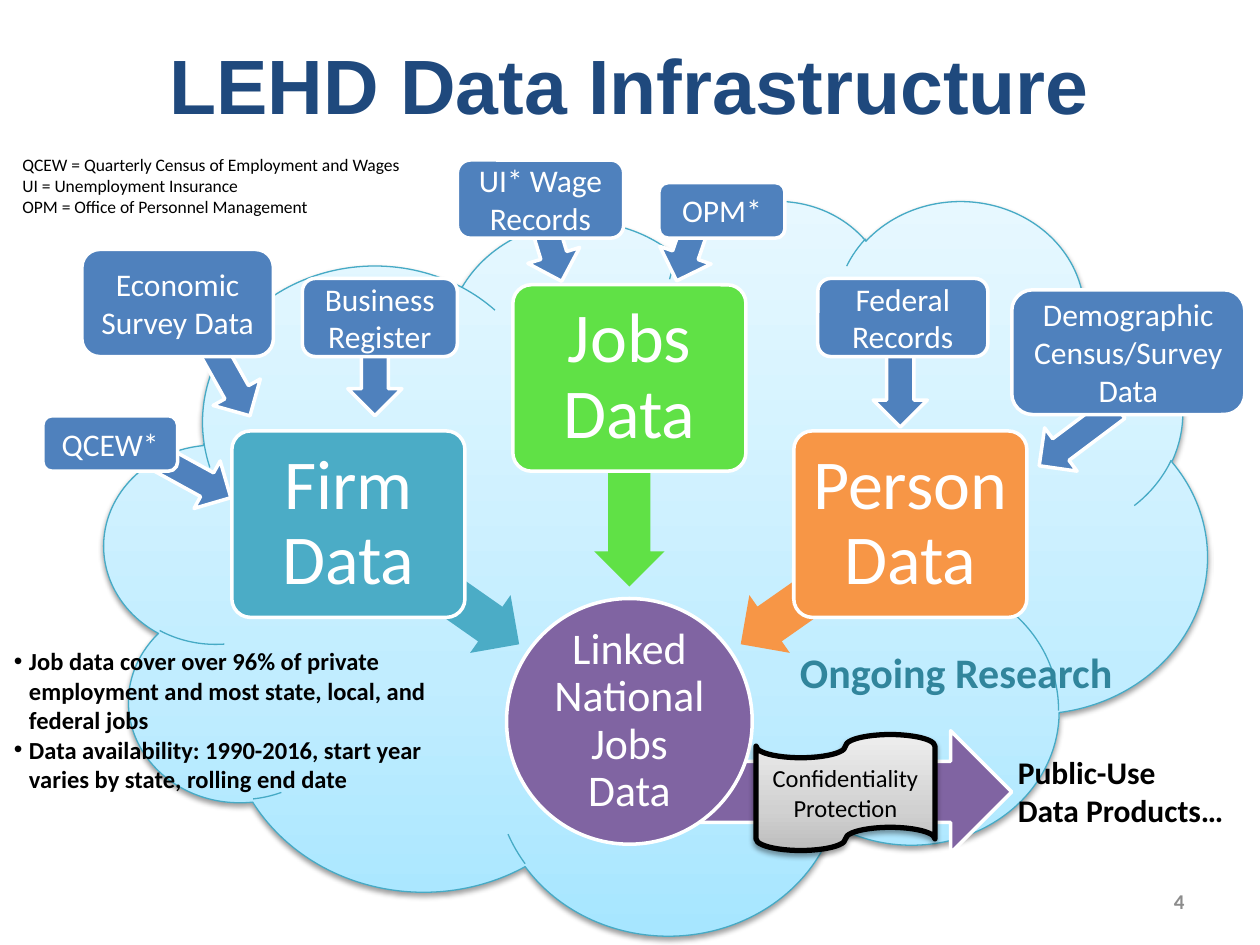
from copy import deepcopy
from dataclasses import dataclass

from lxml.etree import SubElement
from pptx import Presentation
from pptx.dml.color import RGBColor
from pptx.enum.shapes import MSO_SHAPE as Preset
from pptx.enum.text import MSO_ANCHOR as Anchor, MSO_AUTO_SIZE as AutoSize, PP_ALIGN as Align
from pptx.oxml.ns import qn
from pptx.util import Emu, Pt

PX = 9144


@dataclass(frozen=True)
class Theme:
    title_font: str = "Arial"
    body_font: str = "Calibri"
    navy: str = "1F497D"
    blue: str = "4F81BD"
    teal: str = "4BACC6"
    green: str = "60E146"
    orange: str = "F79646"
    purple: str = "8064A2"
    dark_teal: str = "31859C"
    cloud_line: str = "46AAC5"
    gray: str = "8C8C8C"
    white: str = "FFFFFF"
    black: str = "000000"
    cloud_stops: tuple = ((0, "A7E6FF"), (0.35, "C1EDFF"), (1, "E7F8FF"))
    tape_stops: tuple = ((0, "BDBDBD"), (0.35, "D1D1D1"), (1, "EEEEEE"))
    title_size: int = 44
    card_size: int = 40
    hub_size: int = 25
    heading_size: int = 24
    label_size: int = 18
    note_size: int = 14
    number_size: int = 12
    legend_size: int = 10


THEME = Theme()

ARROW_SIZE = (77, 43)
INPUTS = [
    ("QCEW*", (34, 330, 107, 44), (111, 355), 28.8),
    ("Economic Survey Data", (65, 198, 152, 85), (141, 275), 60.7),
    ("Business Register", (240, 221, 123, 62), (259, 270), 90),
    ("UI* Wage Records", (363, 127, 132, 62), (396, 165), 73),
    ("Federal Records", (649, 221, 135, 62), (676, 279), 90),
    ("Demographic Census/Survey Data", (803, 230, 185, 99), (817, 325), 143.1),
    ("OPM*", (523, 145, 100, 44), (511, 165), 109),
]

CARD_SIZE = (185, 148)
CARD_ARROW_SIZE = (165, 56)
CARDS = [
    ("Firm Data", THEME.teal, (184, 342), (262, 436), 215),
    ("Jobs Data", THEME.green, (407, 226), (417, 355), 270),
    ("Person Data", THEME.orange, (630, 342), (573, 436), 325),
]


def emu(box):
    return [Emu(value * PX) for value in box]


def set_attributes(target, values):
    for name, value in values.items():
        setattr(target, name, value)


def write_text(shape, text, size, color, bold=False, font=THEME.body_font,
               paragraph_format=None, **frame_format):
    frame = shape.text_frame
    set_attributes(frame, {"word_wrap": True, "auto_size": AutoSize.NONE, **frame_format})
    frame.text = text
    for paragraph in frame.paragraphs:
        set_attributes(paragraph, paragraph_format or {})
        for run in paragraph.runs:
            set_attributes(run.font, {"size": Pt(size), "bold": bold, "name": font})
            run.font.color.rgb = RGBColor.from_string(color)


def add_preset(slide, preset, box, fill=None, line=THEME.white, width=2,
               rotation=0, adjustments=()):
    shape = slide.shapes.add_shape(preset, *emu(box))
    shape.shadow.inherit = False
    shape.rotation = rotation
    for index, value in enumerate(adjustments):
        shape.adjustments[index] = value
    if fill:
        shape.fill.solid()
        shape.fill.fore_color.rgb = RGBColor.from_string(fill)
    if line:
        shape.line.color.rgb = RGBColor.from_string(line)
        shape.line.width = Pt(width)
    else:
        shape.line.fill.background()
    return shape


def add_shaded_preset(slide, preset, box, stops, line, width):
    shape = add_preset(slide, preset, box, line=line, width=width)
    shape.fill.gradient()
    shape.fill.gradient_angle = 90
    stop_list = shape.element.spPr.find(".//" + qn("a:gsLst"))
    while len(stop_list) < len(stops):
        stop_list.append(deepcopy(stop_list[0]))
    for stop, (position, color) in zip(shape.fill.gradient_stops, stops):
        stop.position = position
        stop.color.rgb = RGBColor.from_string(color)
    effects = shape.element.spPr.find(qn("a:effectLst"))
    shadow = SubElement(effects, qn("a:outerShdw"), blurRad=str(Pt(3.1)), dist=str(Pt(1.6)),
                        dir="5400000", rotWithShape="0")
    shadow_color = SubElement(shadow, qn("a:srgbClr"), val=THEME.black)
    SubElement(shadow_color, qn("a:alpha"), val="38000")
    return shape


def add_label(slide, box, text, size, color, **options):
    label = slide.shapes.add_textbox(*emu(box))
    write_text(label, text, size, color, **options)


def write_centered(shape, text, size, color, line_spacing=1.0, inset=None, **options):
    sides = ("margin_left", "margin_top", "margin_right", "margin_bottom")
    margins = {side: Emu(inset * PX) for side in sides} if inset else {}
    write_text(shape, text, size, color, vertical_anchor=Anchor.MIDDLE,
               paragraph_format={"alignment": Align.CENTER, "line_spacing": line_spacing},
               **margins, **options)


def place_placeholder(placeholder, box):
    set_attributes(placeholder, dict(zip(("left", "top", "width", "height"), emu(box))))
    placeholder.element.getparent().append(placeholder.element)


def add_inputs(slide):
    for _, _, position, rotation in INPUTS:
        add_preset(slide, Preset.RIGHT_ARROW, position + ARROW_SIZE, THEME.blue,
                   rotation=rotation)
    for text, box, _, _ in INPUTS:
        source = add_preset(slide, Preset.ROUNDED_RECTANGLE, box, THEME.blue)
        write_centered(source, text, THEME.label_size, THEME.white)


def add_cards(slide):
    for text, color, position, arrow_position, rotation in CARDS:
        add_preset(slide, Preset.LEFT_ARROW, arrow_position + CARD_ARROW_SIZE, color,
                   line=None, rotation=rotation, adjustments=(0.6, 0.5))
        card = add_preset(slide, Preset.ROUNDED_RECTANGLE, position + CARD_SIZE, color,
                          adjustments=(0.1,))
        write_centered(card, text, THEME.card_size, THEME.white, line_spacing=0.9, inset=8)


def add_hub(slide):
    hub = add_preset(slide, Preset.OVAL, (402, 475, 195, 195), THEME.purple)
    write_centered(hub, "Linked National Jobs Data", THEME.hub_size, THEME.white,
                   line_spacing=0.9, inset=2)


def add_protection(slide):
    tape = add_shaded_preset(slide, Preset.FLOWCHART_PUNCHED_TAPE, (600, 583, 142, 92),
                             THEME.tape_stops, THEME.black, 3)
    write_centered(tape, "Confidentiality Protection", THEME.note_size, THEME.black)


def add_title(slide):
    place_placeholder(slide.shapes.title, (50, 4, 900, 125))
    write_centered(slide.shapes.title, "LEHD Data Infrastructure", THEME.title_size,
                   THEME.navy, bold=True, font=THEME.title_font)


def add_coverage_list(slide):
    body = slide.placeholders[1]
    place_placeholder(body, (1, 508, 375, 128))
    write_text(body, "Job data cover over 96% of private employment and most state, local, "
               "and federal jobs\nData availability: 1990-2016, start year varies by state, "
               "rolling end date", THEME.note_size, THEME.black, bold=True,
               paragraph_format={"space_before": Pt(0)})
    for paragraph in body.text_frame.paragraphs:
        properties = paragraph._p.get_or_add_pPr()
        properties.set("marL", str(12 * PX))
        properties.set("indent", str(-12 * PX))


def add_labels(slide):
    add_label(slide, (798, 593, 190, 71), "Public-Use\vData Products…",
              THEME.label_size, THEME.black, bold=True)
    add_label(slide, (8, 117, 324, 61),
              "QCEW = Quarterly Census of Employment and Wages\n"
              "UI = Unemployment Insurance\nOPM = Office of Personnel Management",
              THEME.legend_size, THEME.black, word_wrap=False)
    add_label(slide, (625, 508, 271, 50), "Ongoing Research", THEME.heading_size,
              THEME.dark_teal, bold=True, word_wrap=False)
    add_label(slide, (717, 695, 233, 40), "4", THEME.number_size, THEME.gray, bold=True,
              vertical_anchor=Anchor.MIDDLE, paragraph_format={"alignment": Align.RIGHT})


def main():
    presentation = Presentation()
    presentation.slide_width, presentation.slide_height = emu((1000, 750))
    slide = presentation.slides.add_slide(presentation.slide_layouts[1])
    add_shaded_preset(slide, Preset.CLOUD, (83, 158, 875, 583), THEME.cloud_stops,
                      THEME.cloud_line, 0.75)
    add_preset(slide, Preset.RIGHT_ARROW, (493, 580, 310, 97), THEME.purple)
    add_title(slide)
    add_inputs(slide)
    add_hub(slide)
    add_cards(slide)
    add_coverage_list(slide)
    add_protection(slide)
    add_labels(slide)
    presentation.save("out.pptx")


if __name__ == "__main__":
    main()
